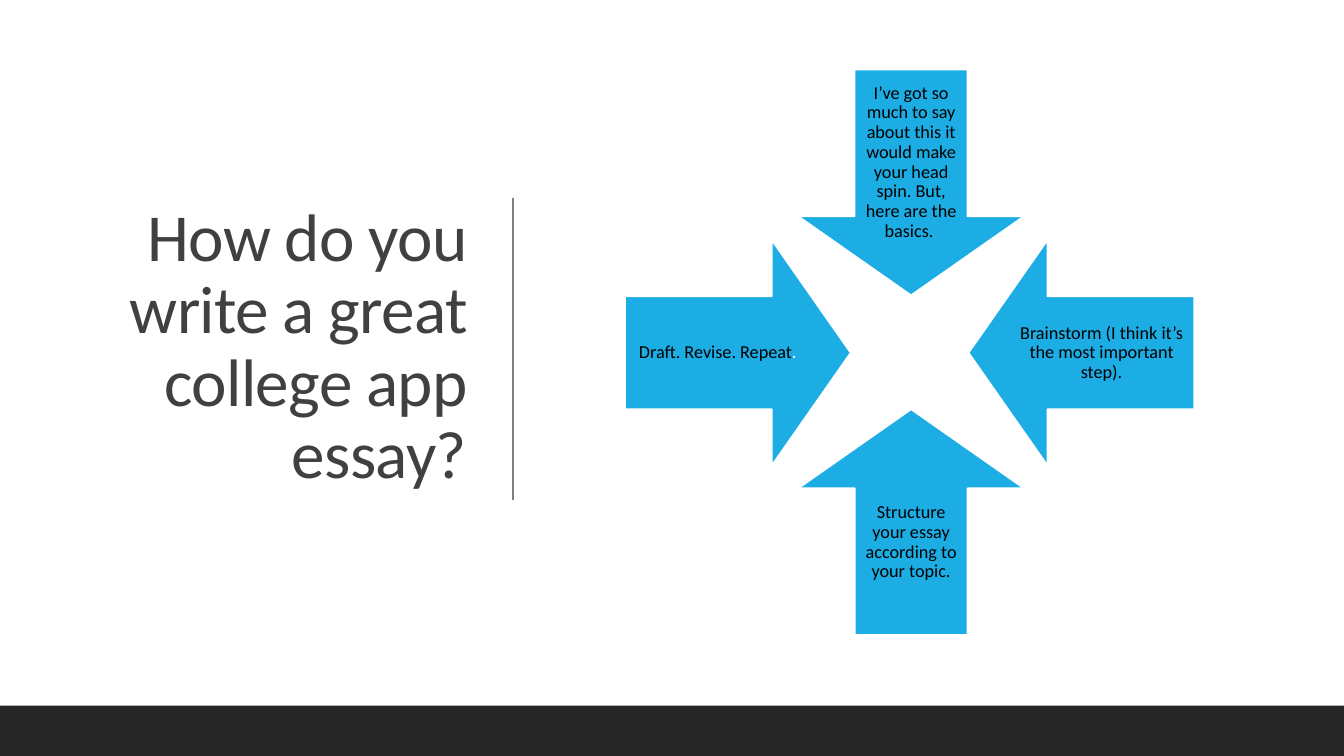
from dataclasses import dataclass

from lxml import etree
from pptx import Presentation
from pptx import util as u
from pptx.dml.color import RGBColor
from pptx.enum import shapes, text
from pptx.oxml.ns import qn

FONT = "Calibri"
BLUE, BLACK, WHITE = "1CADE4", "000000", "FFFFFF"
SLIDE_W, SLIDE_H = 960, 540
ARROW = 161.3           # side of each arrow's square
LABEL_LONG = 132.5      # label length along the arrow, from its tail
SHAFT = ARROW / 2       # label width across the arrow
CENTER_X, CENTER_Y = 650.8, 252


@dataclass
class Run:
    words: str
    color: str = BLACK


@dataclass
class Step:
    left: float
    top: float
    rotation: int
    runs: list[Run]

    def label_box(self) -> tuple[float, float, float, float]:
        """Left, top, width and height of the label on the arrow's shaft."""
        inset, head = ARROW / 4, ARROW - LABEL_LONG
        if self.rotation in (0, 180):
            shift = head if self.rotation == 180 else 0
            return self.left + inset, self.top + shift, SHAFT, LABEL_LONG
        shift = head if self.rotation == 90 else 0
        return self.left + shift, self.top + inset, LABEL_LONG, SHAFT


MID_X, MID_Y = CENTER_X - ARROW / 2, CENTER_Y - ARROW / 2
STEPS = [
    Step(MID_X, 49.7, 0, [Run("I’ve got so much to say about this it would make "
                              "your head spin. But, here are the basics. ")]),
    Step(691.8, MID_Y, 90, [Run("Brainstorm (I think it’s the most important step).")]),
    Step(MID_X, 292.3, 180, [Run("Structure your essay according to your topic.")]),
    Step(446.4, MID_Y, 270, [Run("Draft. Revise. Repeat"), Run(".", WHITE)]),
]


def rgb(value: str) -> RGBColor:
    return RGBColor.from_string(value)


def add_block(slide, kind, left: float, top: float, width: float, height: float, fill: str):
    sp = slide.shapes.add_shape(kind, u.Pt(left), u.Pt(top), u.Pt(width), u.Pt(height))
    sp.shadow.inherit = False
    sp.fill.solid()
    sp.fill.fore_color.rgb = rgb(fill)
    sp.line.fill.background()
    return sp


def add_text(slide, box: tuple[float, float, float, float], runs: list[Run],
             size: float, align):
    sp = slide.shapes.add_textbox(*(u.Pt(n) for n in box))
    tf = sp.text_frame
    tf.word_wrap = True
    tf.vertical_anchor = text.MSO_ANCHOR.MIDDLE
    tf.margin_left = tf.margin_right = tf.margin_top = tf.margin_bottom = u.Pt(7.2)
    p = tf.paragraphs[0]
    p.alignment = align
    p.line_spacing = 0.9
    p.font.name, p.font.size = FONT, u.Pt(size)
    for run in runs:
        r = p.add_run()
        r.text = run.words
        r.font.color.rgb = rgb(run.color)
    return p


def add_step(slide, step: Step) -> None:
    sp = add_block(slide, shapes.MSO_SHAPE.DOWN_ARROW, step.left, step.top,
                   ARROW, ARROW, BLUE)
    sp.adjustments[0], sp.adjustments[1] = 0.5, 0.35
    sp.rotation = step.rotation
    sp.line.color.rgb = rgb(WHITE)
    sp.line.width = u.Pt(1.25)
    add_text(slide, step.label_box(), step.runs, 13, text.PP_ALIGN.CENTER)


def add_divider(slide, x: float, top: float, bottom: float) -> None:
    line = slide.shapes.add_connector(shapes.MSO_CONNECTOR.STRAIGHT,
                                      u.Pt(x), u.Pt(top), u.Pt(x), u.Pt(bottom))
    line.line.color.rgb = rgb("808080")
    line.line.width = u.Pt(1)
    etree.SubElement(line.element.spPr, qn("a:effectLst"))


def main() -> None:
    prs = Presentation()
    prs.slide_width, prs.slide_height = u.Pt(SLIDE_W), u.Pt(SLIDE_H)
    s = prs.slides.add_slide(prs.slide_layouts[6])

    # Title with slightly tightened letters
    title = add_text(s, (50.4, 49.7, 290.2, 398.2),
                     [Run("How do you write a great college app essay?", "404040")],
                     48, text.PP_ALIGN.RIGHT)
    for r in title.runs:
        r.font._element.set("spc", "-50")

    # Divider and footer band
    add_divider(s, 366.5, 141.1, 357.1)
    add_block(s, shapes.MSO_SHAPE.RECTANGLE, 0, 504, SLIDE_W, 36, "262626")

    # Four arrows pointing at the middle
    for step in STEPS:
        add_step(s, step)

    prs.save("out.pptx")


if __name__ == "__main__":
    main()
